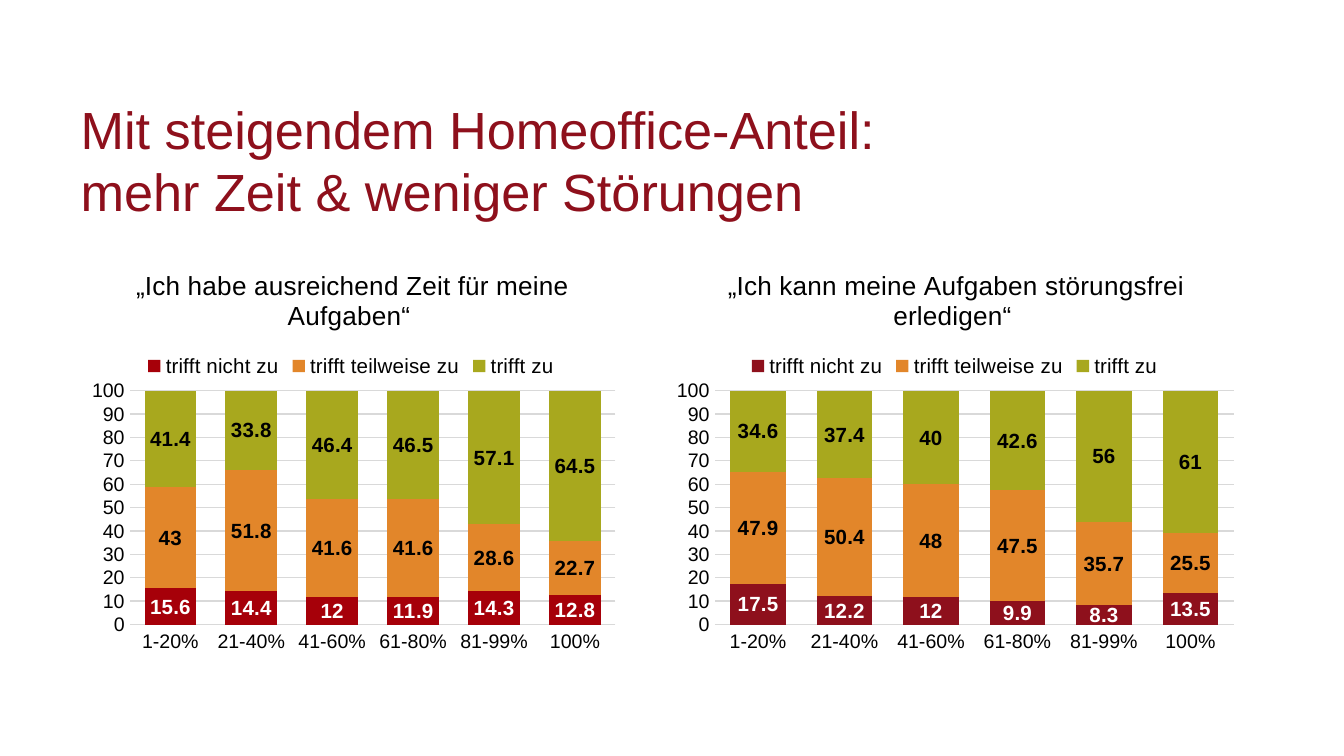
from lxml import etree
from pptx import Presentation
from pptx import util as u
from pptx.chart.data import CategoryChartData
from pptx.dml.color import RGBColor
from pptx.enum import chart as ch
from pptx.enum import text
from pptx.oxml import ns

FONT = "Arial"
COLORS = {
    "title": "8E101C",
    "black": "000000",
    "white": "FFFFFF",
    "grid": "D9D9D9",
    "red": "A60009",
    "dark_red": "8E101C",
    "orange": "E2862A",
    "olive": "A8A81E",
}
HOMEOFFICE_SHARES = ["1-20%", "21-40%", "41-60%", "61-80%", "81-99%", "100%"]
ANSWERS = ["trifft nicht zu", "trifft teilweise zu", "trifft zu"]


def color(name):
    return RGBColor.from_string(COLORS[name])


def style_font(font, size, color_name="black", bold=False):
    font.name = FONT
    font.size = u.Pt(size)
    font.bold = bold
    font.color.rgb = color(color_name)


def place(part, position, inner=False):
    """Give a chart part a fixed layout in fractions of the chart area."""
    for old in part.findall(ns.qn("c:layout")):
        part.remove(old)
    layout = etree.Element(ns.qn("c:layout"))
    manual = etree.SubElement(layout, ns.qn("c:manualLayout"))
    settings = [("layoutTarget", "inner")] if inner else []
    settings += [("xMode", "edge"), ("yMode", "edge")]
    settings += zip("xywh", position)
    for tag, value in settings:
        etree.SubElement(manual, ns.qn(f"c:{tag}")).set("val", str(value))
    if inner:
        part.insert(0, layout)
    else:
        part.find(ns.qn("c:legendPos")).addnext(layout)


def add_title(slide, wording):
    title = slide.shapes.title
    title.left, title.top = u.Inches(0.5), u.Inches(0.67)
    title.width, title.height = u.Inches(6.68), u.Inches(1.14)
    frame = title.text_frame
    frame.text = wording
    frame.word_wrap = True
    frame.auto_size = text.MSO_AUTO_SIZE.NONE
    frame.vertical_anchor = text.MSO_ANCHOR.TOP
    frame.paragraphs[0].alignment = text.PP_ALIGN.LEFT
    style_font(frame.paragraphs[0].runs[0].font, 28, "title")


def style_axes(chart):
    for axis in (chart.category_axis, chart.value_axis):
        axis.major_tick_mark = axis.minor_tick_mark = ch.XL_TICK_MARK.NONE
        style_font(axis.tick_labels.font, 10.5)
    scale = chart.value_axis
    scale.minimum_scale, scale.maximum_scale, scale.major_unit = 0, 100, 10
    scale.format.line.fill.background()
    for line in (chart.category_axis.format.line,
                 scale.major_gridlines.format.line):
        line.color.rgb = color("grid")
        line.width = u.Pt(0.75)


def style_series(plot, fills):
    plot.gap_width, plot.overlap = 56, 100
    plot.vary_by_categories = False
    for series, fill, label_color in zip(
            plot.series, fills, ("white", "black", "black")):
        series.format.fill.solid()
        series.format.fill.fore_color.rgb = color(fill)
        labels = series.data_labels
        labels.show_value = True
        labels.position = ch.XL_LABEL_POSITION.CENTER
        style_font(labels.font, 11, label_color, bold=True)


def add_answer_chart(slide, statement, left, width, answers, fills,
                     plot_position, legend_position):
    data = CategoryChartData(number_format="General")
    data.categories = HOMEOFFICE_SHARES
    for name, values in zip(ANSWERS, answers):
        data.add_series(name, values)
    chart = slide.shapes.add_chart(
        ch.XL_CHART_TYPE.COLUMN_STACKED, u.Inches(left), u.Inches(1.85),
        u.Inches(width), u.Inches(3.11), data).chart
    style_font(chart.font, 10.5)

    chart.has_title = True
    heading = chart.chart_title.text_frame
    heading.text = statement
    style_font(heading.paragraphs[0].runs[0].font, 14)
    chart.chart_title.include_in_layout = False

    chart.has_legend = True
    chart.legend.position = ch.XL_LEGEND_POSITION.TOP
    chart.legend.include_in_layout = False
    style_font(chart.legend.font, 11)

    style_axes(chart)
    style_series(chart.plots[0], fills)
    plot_area = chart.plots[0]._element.getparent()
    place(plot_area, plot_position, inner=True)
    place(chart.legend._element, legend_position)


def main():
    prs = Presentation()
    prs.slide_width = u.Inches(10)
    prs.slide_height = prs.slide_width * 9 // 16
    slide = prs.slides.add_slide(prs.slide_layouts[5])
    add_title(slide, "Mit steigendem Homeoffice-Anteil: "
                     "mehr Zeit & weniger Störungen")
    add_answer_chart(
        slide, "„Ich kann meine Aufgaben störungsfrei erledigen“ ",
        4.87, 4.49,
        [(17.5, 12.2, 12, 9.9, 8.3, 13.5),
         (47.9, 50.4, 48, 47.5, 35.7, 25.5),
         (34.6, 37.4, 40, 42.6, 56, 61)],
        ("dark_red", "orange", "olive"),
        (0.1, 0.34, 0.86, 0.56), (0.15, 0.24))
    add_answer_chart(
        slide, "„Ich habe ausreichend Zeit für meine Aufgaben“ ",
        0.5, 4.25,
        [(15.6, 14.4, 12, 11.9, 14.3, 12.8),
         (43, 51.8, 41.6, 41.6, 28.6, 22.7),
         (41.4, 33.8, 46.4, 46.5, 57.1, 64.5)],
        ("red", "orange", "olive"),
        (0.11, 0.34, 0.85, 0.56), (0.13, 0.24))
    prs.save("out.pptx")


if __name__ == "__main__":
    main()
